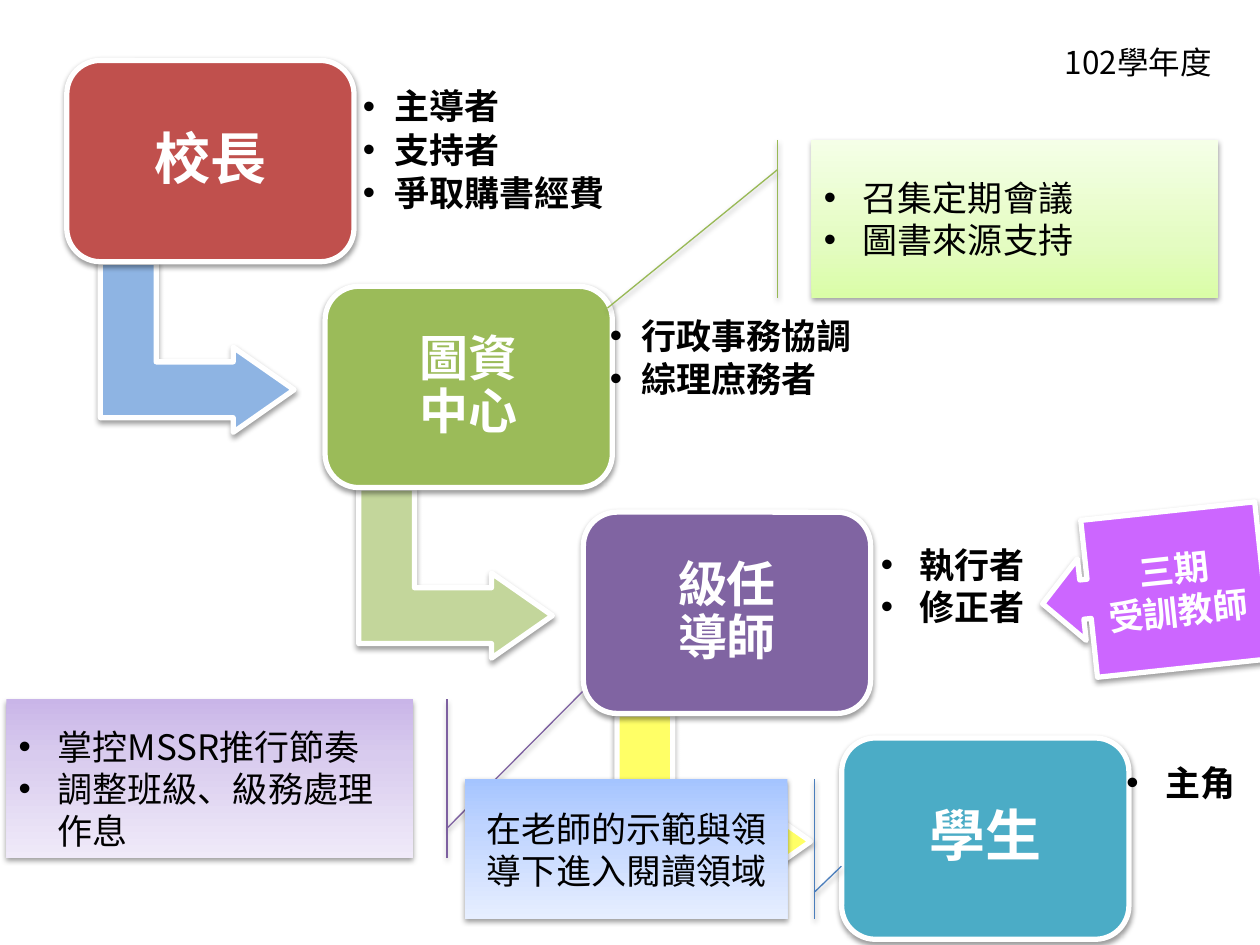
from lxml import etree
from copy import deepcopy
from pptx import Presentation
from pptx import util as u
from pptx.dml.color import RGBColor
from pptx.enum import shapes, text
from pptx.oxml.ns import qn

FONT = "Noto Sans CJK SC"
WHITE, BLACK = RGBColor(255, 255, 255), RGBColor(0, 0, 0)
RED, GREEN = RGBColor(0xC0, 0x50, 0x4D), RGBColor(0x9B, 0xBB, 0x59)
PURPLE, TEAL = RGBColor(0x80, 0x64, 0xA2), RGBColor(0x4B, 0xAC, 0xC6)
SKY, LEAF = RGBColor(0x8E, 0xB4, 0xE3), RGBColor(0xC3, 0xD6, 0x9B)
YELLOW, PINK = RGBColor(0xFF, 0xFF, 0x66), RGBColor(0xCC, 0x66, 0xFF)
PURPLE_EDGE, GREEN_EDGE = RGBColor(0x7D, 0x60, 0xA0), RGBColor(0x98, 0xB9, 0x55)
BLUE_EDGE = RGBColor(0x4B, 0x7E, 0xBC)
LILACS = [RGBColor(0xC9, 0xB5, 0xE8), RGBColor(0xD8, 0xCB, 0xEE), RGBColor(0xF0, 0xEA, 0xF9)]
LIMES = [RGBColor(0xDA, 0xFD, 0xA7), RGBColor(0xE4, 0xFC, 0xC2), RGBColor(0xF5, 0xFF, 0xE7)]
BLUES = [RGBColor(0xA4, 0xC4, 0xFF), RGBColor(0xBF, 0xD4, 0xFF), RGBColor(0xE6, 0xEE, 0xFF)]
MIDDLE, TOP = text.MSO_ANCHOR.MIDDLE, text.MSO_ANCHOR.TOP
LEFT, CENTER = text.PP_ALIGN.LEFT, text.PP_ALIGN.CENTER


class Board:
    """Style and current slide; places are percentages of the slide's size."""

    def __init__(self, deck):
        self.deck = deck
        self.slide = deck.slides.add_slide(deck.slide_layouts[4])

    def area(self, place):
        width, height = self.deck.slide_width, self.deck.slide_height
        return [u.Emu(int(share * side / 100))
                for share, side in zip(place, (width, height, width, height))]

    def move(self, holder, place):
        holder.left, holder.top, holder.width, holder.height = self.area(place)
        self.slide.shapes._spTree.append(holder._element)  # bring to front

    def shadow(self, shape):
        shape.shadow.inherit = False
        effects = shape._element.spPr.find(qn("a:effectLst"))
        outer = etree.SubElement(effects, qn("a:outerShdw"), blurRad="40000", dist="20000",
                                 dir="5400000", rotWithShape="0")
        color = etree.SubElement(outer, qn("a:srgbClr"), val="000000")
        etree.SubElement(color, qn("a:alpha"), val="38000")

    def frame(self, shape, anchor=TOP, side=0.1, edge=0.05):
        frame = shape.text_frame
        frame.word_wrap, frame.auto_size = True, text.MSO_AUTO_SIZE.NONE
        frame.vertical_anchor = anchor
        frame.margin_left = frame.margin_right = u.Inches(side)
        frame.margin_top = frame.margin_bottom = u.Inches(edge)
        return frame

    def run(self, paragraph, words, size, color, bold):
        run = paragraph.add_run()
        run.text = words
        run.font.size, run.font.bold, run.font.name = u.Pt(size), bold, FONT
        run.font.color.rgb = color
        etree.SubElement(run._r.get_or_add_rPr(), qn("a:ea"), typeface=FONT)

    def lines(self, frame, lines, size=20, color=BLACK, bold=False, align=LEFT,
              indent=0, spacing=1.0, after=0):
        for index, line in enumerate(lines):
            paragraph = frame.add_paragraph() if index else frame.paragraphs[0]
            paragraph.alignment, paragraph.line_spacing = align, spacing
            paragraph.space_before, paragraph.space_after = u.Pt(0), u.Pt(after)
            if indent:
                props = paragraph._p.get_or_add_pPr()
                props.set("marL", str(u.Inches(indent)))
                props.set("indent", str(-u.Inches(indent)))
                etree.SubElement(props, qn("a:buFont"), typeface="Arial")
                etree.SubElement(props, qn("a:buChar"), char="•")
            for part, words in enumerate(line.split("\n")):
                if part:
                    paragraph.add_line_break()
                self.run(paragraph, words, size, color, bold)

    def title(self, words, place):
        holder = self.slide.shapes.title
        self.move(holder, place)
        self.lines(self.frame(holder), [words], size=18)

    def roles(self, index, place, duties, tight=False):
        holder = self.slide.placeholders[index]
        self.move(holder, place)
        if tight:
            frame = self.frame(holder, MIDDLE, 0.08, 0.08)
            self.lines(frame, duties, bold=True, indent=0.25, spacing=0.9, after=3)
        else:
            self.lines(self.frame(holder), duties, bold=True, indent=0.31)

    def note(self, place, details, indent=0):
        box = self.slide.shapes.add_textbox(*self.area(place))
        self.lines(self.frame(box), details, indent=indent)

    def shape(self, kind, place, adjustments, edge=WHITE, weight=3, fill=None, turn=0):
        shape = self.slide.shapes.add_shape(kind, *self.area(place))
        for index, value in enumerate(adjustments):
            shape.adjustments[index] = value
        shape.rotation = turn
        if fill is not None:
            shape.fill.solid()
            shape.fill.fore_color.rgb = fill
        shape.line.color.rgb, shape.line.width = edge, u.Pt(weight)
        self.shadow(shape)
        return shape

    def callout(self, place, pointer, colors, edge, turn=0):
        shape = self.shape(shapes.MSO_SHAPE.LINE_CALLOUT_1_ACCENT_BAR, place,
                           (0.188, -0.083, *pointer), edge, 0.75, turn=turn)
        shape.fill.gradient()
        shape.fill.gradient_angle = 90
        stops = shape._element.spPr.find(".//" + qn("a:gsLst"))
        stops.insert(1, deepcopy(stops[0]))
        for stop, color, position in zip(shape.fill.gradient_stops, colors, (0, 0.35, 1)):
            stop.color.rgb, stop.position = color, position
        return shape


def main():
    deck = Presentation()
    deck.slide_width, deck.slide_height = u.Inches(10), u.Inches(7.5)
    board = Board(deck)

    # Staircase of roles, each arrow leading to the next step
    steps = [("校長", 32, RED, SKY), ("圖資\n中心", 28, GREEN, LEAF),
             ("級任\n導師", 28, PURPLE, YELLOW), ("學生", 32, TEAL, None)]
    for index, (role, size, color, arrow) in enumerate(steps):
        across, down = 20.5 * index, 23.9 * index
        if arrow is not None:
            board.shape(shapes.MSO_SHAPE.BENT_UP_ARROW, (8.9 + across, 26.5 + down, 13.5, 20.5),
                        (0.328, 0.25, 0.358), fill=arrow, turn=90)
        step = board.shape(shapes.MSO_SHAPE.ROUNDED_RECTANGLE,
                           (5.3 + across, 6.4 + down, 22.8, 21.3), (0.167,), fill=color)
        board.lines(board.frame(step, MIDDLE, 0.2, 0.2), [role], size, WHITE, True,
                    CENTER, spacing=0.9)

    # Duties beside each step
    board.roles(3, (68.9, 56.8, 14.2, 10.3), ["執行者", "修正者"])
    board.roles(1, (28, 8, 21.8, 16.1), ["主導者", "支持者", "爭取購書經費"], tight=True)
    board.roles(2, (47.6, 30, 25.6, 16.1), ["行政事務協調", "綜理庶務者"], tight=True)

    # Callouts with details
    board.callout((0.5, 74, 32.3, 16.8), (1.049, -0.416), LILACS, PURPLE_EDGE, turn=180)
    board.note((0.5, 76.1, 32.3, 14.8), ["掌控MSSR推行節奏", "調整班級、級務處理作息"], 0.31)
    board.roles(4, (88.4, 79.9, 14.2, 5.9), ["主角"])
    support = board.callout((64.4, 14.8, 32.3, 16.7), (1.066, -0.501), LIMES, GREEN_EDGE)
    board.lines(board.frame(support, MIDDLE), ["召集定期會議", "圖書來源支持"], indent=0.31)
    board.callout((36.9, 82.4, 25.6, 14.8), (0.374, -0.167), BLUES, BLUE_EDGE, turn=180)
    board.note((37.6, 84.8, 25, 10.3), ["在老師的示範與領導下進入閱讀領域"])

    # Trained teachers and school year
    trained = board.shape(shapes.MSO_SHAPE.LEFT_ARROW_CALLOUT, (82.7, 54.3, 17.6, 16.7),
                          (0.25, 0.26, 0.25, 0.789), fill=PINK, turn=353.9)
    board.lines(board.frame(trained, MIDDLE), ["三期", "受訓教師"], color=WHITE, bold=True,
                align=CENTER)
    board.title("102學年度", (83.5, 3.9, 16.9, 5.3))

    deck.save("out.pptx")


if __name__ == "__main__":
    main()
